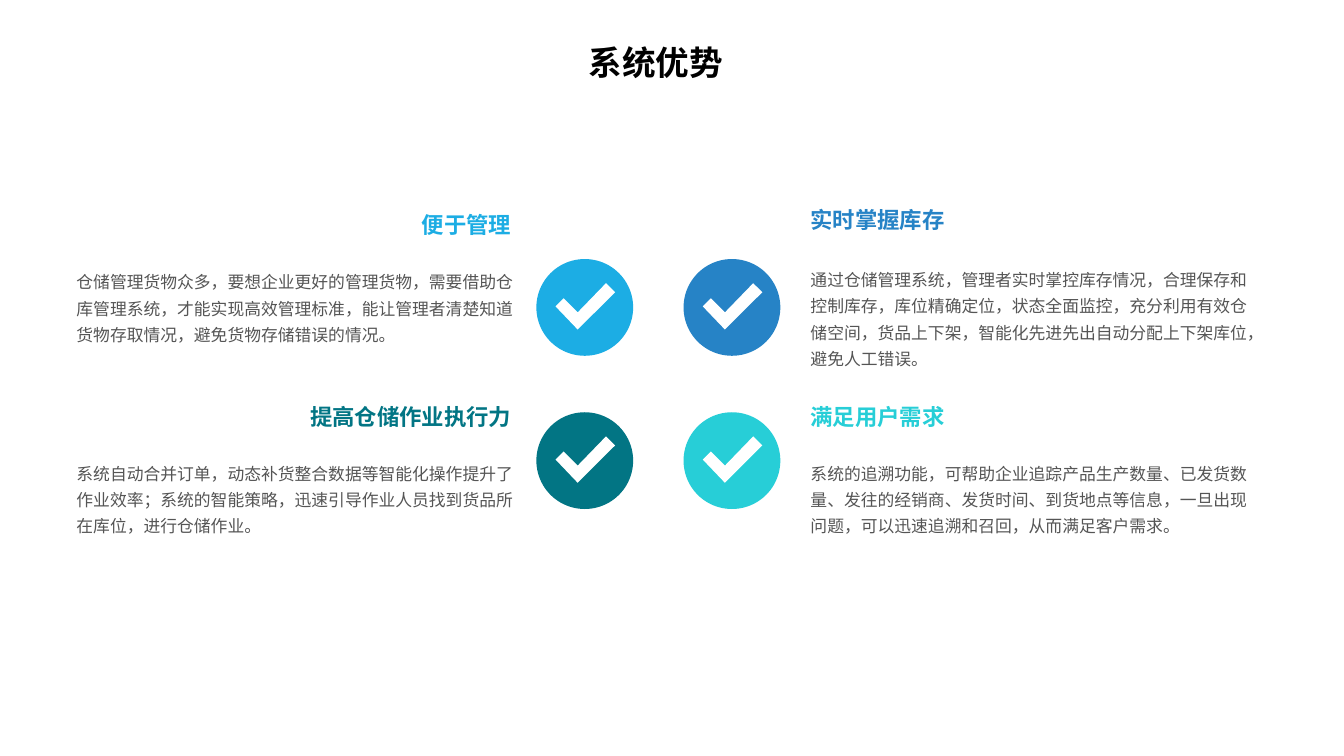
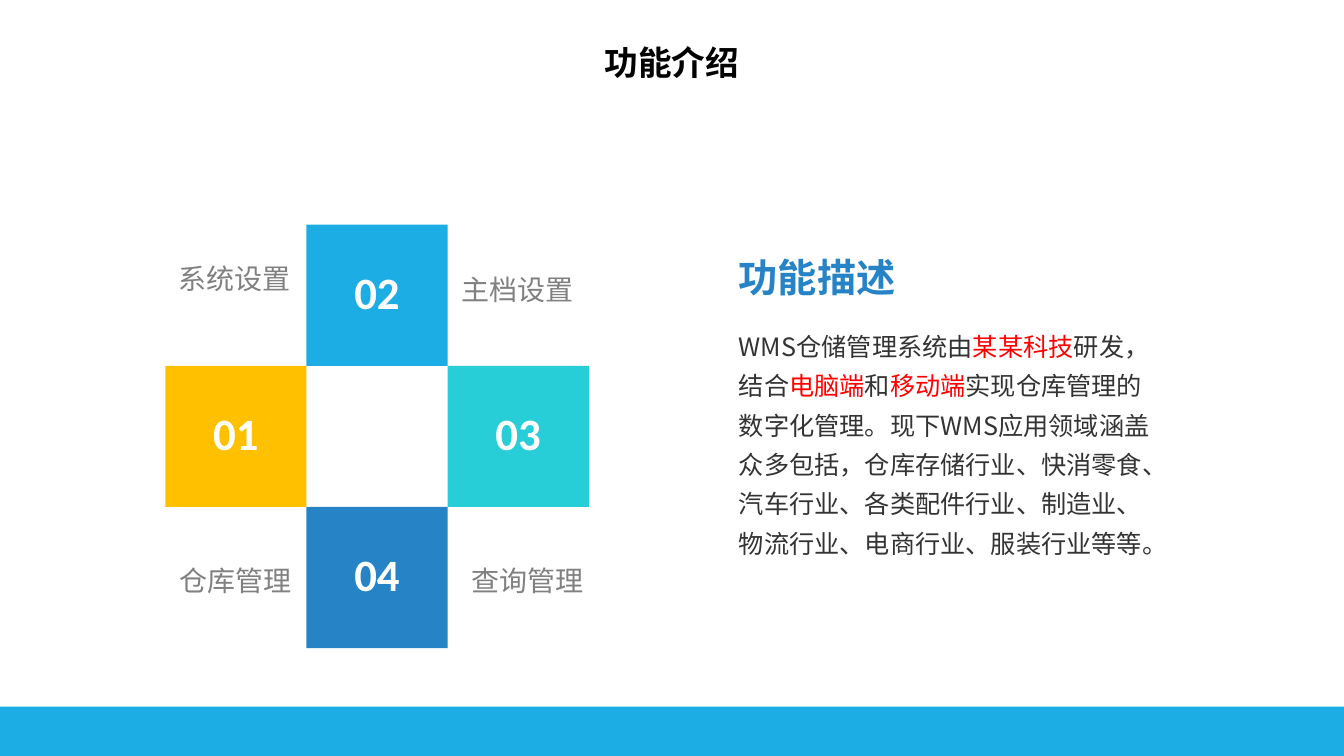
from dataclasses import dataclass

from lxml import etree
from pptx import Presentation
from pptx.dml.color import RGBColor
from pptx.enum.shapes import MSO_SHAPE
from pptx.enum.text import MSO_ANCHOR, MSO_AUTO_SIZE, PP_ALIGN
from pptx.oxml.ns import qn
from pptx.util import Inches, Pt


@dataclass(frozen=True)
class Theme:
    sky: str = "1CADE4"
    blue: str = "2683C6"
    aqua: str = "27CED7"
    teal: str = "027584"
    amber: str = "FFC000"
    red: str = "FF0000"
    black: str = "000000"
    white: str = "FFFFFF"
    ink: str = "333333"
    body_gray: str = "555555"
    label_gray: str = "808080"
    display_font: str = "Calibri"
    text_font: str = "Noto Sans CJK SC"
    body_size: int = 12
    heading_size: int = 16
    description_size: int = 18
    label_size: int = 20
    title_size: int = 24
    subtitle_size: int = 28
    number_size: int = 32
    body_spacing: float = 1.3


@dataclass(frozen=True)
class Grid:
    """Evenly pitched cells, in inches."""
    left: float
    top: float
    column_pitch: float
    row_pitch: float

    def cell(self, column, row):
        return (self.left + column * self.column_pitch,
                self.top + row * self.row_pitch)


@dataclass(frozen=True)
class Advantage:
    column: int
    row: int
    color: str
    heading: str
    detail: str
    heading_lift: float = 0
    detail_lift: float = 0


THEME = Theme()
SLIDE_WIDTH, SLIDE_HEIGHT = 13.33, 7.5
TITLE_ONLY = 5

BADGES = Grid(5.32, 2.57, 1.46, 1.52)
BADGE_SIZE = 0.96
CHECK_OUTLINE = [(0.41, 0.70), (0.19, 0.47), (0.27, 0.39),
                 (0.41, 0.53), (0.69, 0.24), (0.78, 0.33)]
DETAILS = Grid(0.66, 2.59, 7.28, 1.9)
DETAIL_WIDTH, HEADING_WIDTH = 4.55, 3.44
HEADING_RISE = 0.54
HEADING_INSET = 1.07

TILE = 1.4
CROSS = Grid(1.64, 2.23, TILE, TILE)

ADVANTAGES = [
    Advantage(0, 0, THEME.sky, "便于管理",
              "仓储管理货物众多，要想企业更好的管理货物，需要借助仓库管理系统，"
              "才能实现高效管理标准，能让管理者清楚知道货物存取情况，"
              "避免货物存储错误的情况。"),
    Advantage(1, 0, THEME.blue, "实时掌握库存",
              "通过仓储管理系统，管理者实时掌控库存情况，合理保存和控制库存，"
              "库位精确定位，状态全面监控，充分利用有效仓储空间，货品上下架，"
              "智能化先进先出自动分配上下架库位，避免人工错误。",
              heading_lift=0.05, detail_lift=0.02),
    Advantage(0, 1, THEME.teal, "提高仓储作业执行力",
              "系统自动合并订单，动态补货整合数据等智能化操作提升了作业效率；"
              "系统的智能策略，迅速引导作业人员找到货品所在库位，进行仓储作业。"),
    Advantage(1, 1, THEME.aqua, "满足用户需求",
              "系统的追溯功能，可帮助企业追踪产品生产数量、已发货数量、"
              "发往的经销商、发货时间、到货地点等信息，一旦出现问题，"
              "可以迅速追溯和召回，从而满足客户需求。"),
]

# number, column, row, colour
TILES = [("01", 0, 1, THEME.amber), ("02", 1, 0, THEME.sky),
         ("03", 2, 1, THEME.aqua), ("04", 1, 2, THEME.blue)]

# label, left, top, line spacing
MODULES = [("系统设置", 1.62, 2.55, 1), ("主档设置", 4.42, 2.55, 1.3),
           ("仓库管理", 1.63, 5.44, 1.3), ("查询管理", 4.52, 5.44, 1.3)]

DESCRIPTION = (
    "WMS仓储管理系统由*某某科技*研发，结合*电脑端*和*移动端*"
    "实现仓库管理的数字化管理。现下WMS应用领域涵盖众多包括，仓库存储行业、"
    "快消零食、汽车行业、各类配件行业、制造业、物流行业、电商行业、服装行业等等。")


def write(frame, text, *, size, color, font=THEME.display_font, bold=False,
          align=PP_ALIGN.LEFT, spacing=1, anchor=MSO_ANCHOR.TOP,
          fit=MSO_AUTO_SIZE.NONE):
    """Fill a text frame; parts between asterisks are highlighted."""
    frame.word_wrap = True
    frame.auto_size = fit
    frame.vertical_anchor = anchor
    paragraph = frame.paragraphs[0]
    paragraph.alignment = align
    paragraph.line_spacing = spacing
    paragraph.space_before = Pt(0)
    for index, part in enumerate(text.split("*")):
        run = paragraph.add_run()
        run.text = part
        run.font.size = Pt(size)
        run.font.bold = bold
        run.font.name = font
        run.font.color.rgb = RGBColor.from_string(
            THEME.red if index % 2 else color)
        east_asian = etree.SubElement(run.font._element, qn("a:ea"))
        east_asian.set("typeface", THEME.text_font)


def add_text(slide, left, top, width, height, text, **text_format):
    box = slide.shapes.add_textbox(*map(Inches, (left, top, width, height)))
    write(box.text_frame, text, fit=MSO_AUTO_SIZE.SHAPE_TO_FIT_TEXT,
          **text_format)


def paint(shape, color):
    shape.shadow.inherit = False
    shape.fill.solid()
    shape.fill.fore_color.rgb = RGBColor.from_string(color)
    shape.line.fill.background()


def add_block(slide, preset, left, top, width, height, color):
    block = slide.shapes.add_shape(
        preset, *map(Inches, (left, top, width, height)))
    paint(block, color)
    return block


def add_titled_slide(deck, title, left):
    slide = deck.slides.add_slide(deck.slide_layouts[TITLE_ONLY])
    heading = slide.shapes.title
    heading.left, heading.top = Inches(left), Inches(0.41)
    heading.width, heading.height = Inches(2.87), Inches(0.46)
    write(heading.text_frame, title, size=THEME.title_size,
          color=THEME.black, bold=True, align=PP_ALIGN.CENTER, spacing=0.9)
    return slide


def add_check_badge(slide, left, top, color):
    add_block(slide, MSO_SHAPE.OVAL, left, top, BADGE_SIZE, BADGE_SIZE, color)
    points = [(Inches(left + x), Inches(top + y)) for x, y in CHECK_OUTLINE]
    outline = slide.shapes.build_freeform(*points[0])
    outline.add_line_segments(points[1:], close=True)
    paint(outline.convert_to_shape(), THEME.white)


def add_advantage(slide, item):
    add_check_badge(slide, *BADGES.cell(item.column, item.row), item.color)
    left, top = DETAILS.cell(item.column, item.row)
    faces_right = item.column == 0
    add_text(slide, left + HEADING_INSET * faces_right,
             top - HEADING_RISE - item.heading_lift, HEADING_WIDTH, 0.37,
             item.heading, size=THEME.heading_size, color=item.color,
             bold=True, align=PP_ALIGN.RIGHT if faces_right else PP_ALIGN.LEFT)
    add_text(slide, left, top - item.detail_lift, DETAIL_WIDTH, 0.87,
             item.detail, size=THEME.body_size, color=THEME.body_gray,
             font=THEME.text_font, spacing=THEME.body_spacing)


def add_number_tile(slide, number, column, row, color):
    tile = add_block(slide, MSO_SHAPE.RECTANGLE, *CROSS.cell(column, row),
                     TILE, TILE, color)
    tile.text_frame.margin_bottom = Inches(0.12)
    write(tile.text_frame, number, size=THEME.number_size, color=THEME.white,
          bold=True, align=PP_ALIGN.CENTER, anchor=MSO_ANCHOR.MIDDLE)


def build_advantages(deck):
    slide = add_titled_slide(deck, "系统优势", 5.07)
    for item in ADVANTAGES:
        add_advantage(slide, item)


def build_functions(deck):
    slide = add_titled_slide(deck, "功能介绍", 5.23)
    band_top = 7.01
    add_block(slide, MSO_SHAPE.RECTANGLE, 0, band_top, SLIDE_WIDTH,
              SLIDE_HEIGHT - band_top, THEME.sky)
    for tile in TILES:
        add_number_tile(slide, *tile)
    for label, left, top, spacing in MODULES:
        add_text(slide, left, top, 1.42, 0.5, label, size=THEME.label_size,
                 color=THEME.label_gray, align=PP_ALIGN.CENTER,
                 spacing=spacing)
    description_left = 7.23
    add_text(slide, description_left, 2.46, HEADING_WIDTH, 0.57, "功能描述",
             size=THEME.subtitle_size, color=THEME.blue, bold=True)
    add_text(slide, description_left, 3.15, 4.31, 2.43, DESCRIPTION,
             size=THEME.description_size, color=THEME.ink,
             font=THEME.text_font, spacing=THEME.body_spacing)


def main():
    deck = Presentation()
    deck.slide_width, deck.slide_height = map(
        Inches, (SLIDE_WIDTH, SLIDE_HEIGHT))
    build_advantages(deck)
    build_functions(deck)
    deck.save("out.pptx")


if __name__ == "__main__":
    main()
